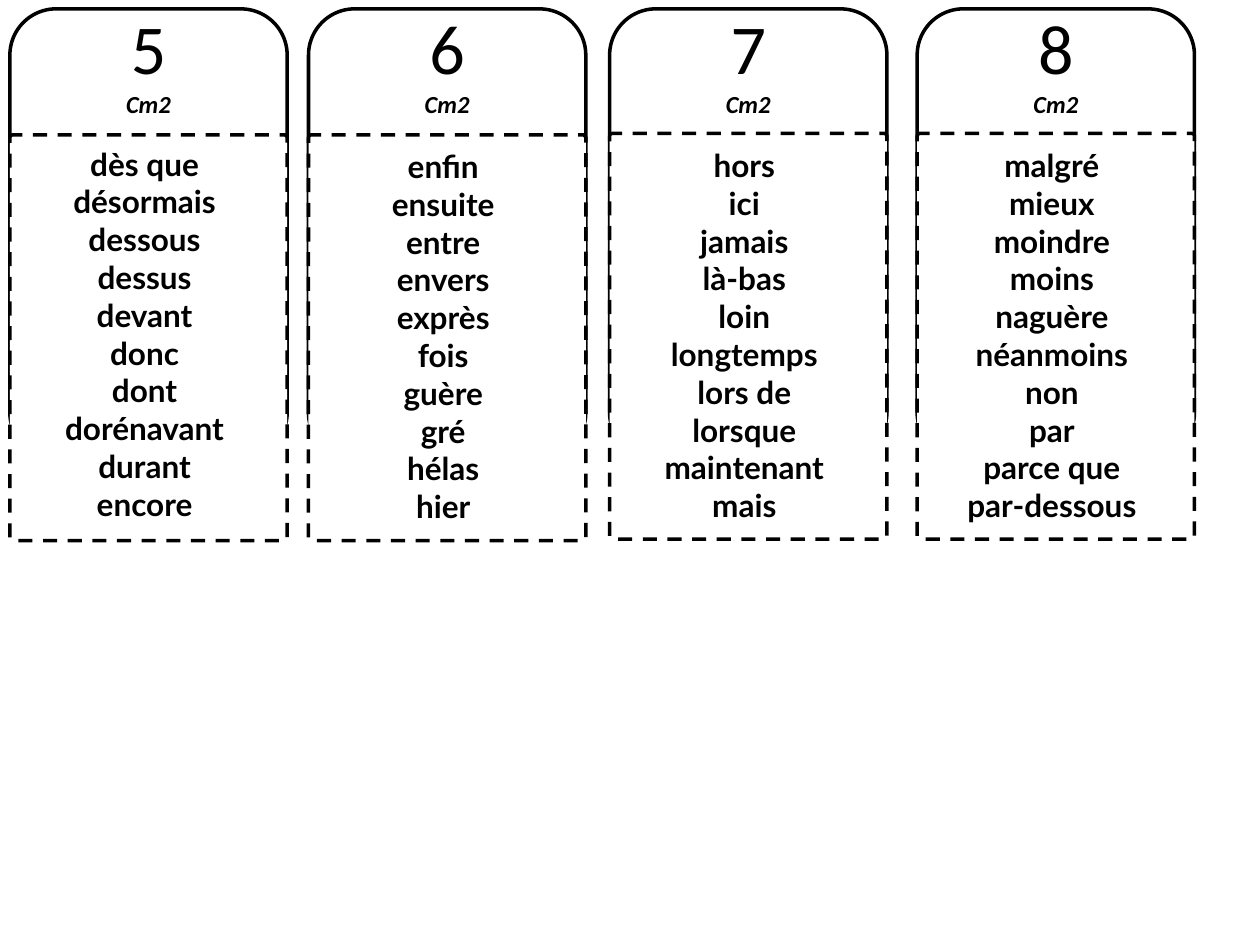
from dataclasses import dataclass
from typing import Any

from pptx import Presentation
from pptx.dml.color import RGBColor
from pptx.enum.dml import MSO_LINE
from pptx.enum.shapes import MSO_SHAPE
from pptx.enum.text import MSO_ANCHOR, MSO_AUTO_SIZE, PP_ALIGN
from pptx.util import Cm, Pt


@dataclass(frozen=True)
class Theme:
    """Colours, line width and text formats."""
    ink: RGBColor = RGBColor(0, 0, 0)
    paper: RGBColor = RGBColor(255, 255, 255)
    line: Pt = Pt(2)

    def number(self) -> dict[str, Any]:
        """Format of the card number."""
        return {"name": "Calibri", "size": Pt(40)}

    def level(self) -> dict[str, Any]:
        """Format of the level label."""
        return {"name": "Calibri", "size": Pt(14), "bold": True, "italic": True}

    def word(self) -> dict[str, Any]:
        """Format of a listed word."""
        return {"name": "Lato", "size": Pt(18), "bold": True}


@dataclass(frozen=True)
class Card:
    """A numbered word list, with lengths in centimetres."""
    number: str
    words: tuple[str, ...]
    left: float
    panel_top: float
    list_top: float
    list_width: float


THEME = Theme()
CARD_W, CARD_H, CARD_TOP = 5.59, 9.07, 0.18
PANEL_H, LIST_H = 8.18, 7.95
CARDS = (
    Card("5", ("dès que", "désormais", "dessous", "dessus", "devant", "donc",
               "dont", "dorénavant", "durant", "encore"), 0.2, 2.72, 2.79, 4.75),
    Card("6", ("enfin", "ensuite", "entre", "envers", "exprès", "fois",
               "guère", "gré", "hélas", "hier"), 6.22, 2.72, 2.84, 4.95),
    Card("7", ("hors", "ici", "jamais", "là-bas", "loin", "longtemps",
               "lors de", "lorsque", "maintenant", "mais"), 12.29, 2.69, 2.82, 5.13),
    Card("8", ("malgré", "mieux", "moindre", "moins", "naguère", "néanmoins",
               "non", "par", "parce que", "par-dessous"), 18.49, 2.69, 2.82, 5.13),
)


def apply(obj: Any, fmt: dict[str, Any]) -> None:
    """Set each attribute named in the format."""
    for name, value in fmt.items():
        setattr(obj, name, value)


def add_lines(tf: Any, lines: list[tuple[str, dict[str, Any]]]) -> None:
    """Write centred paragraphs, one for each line."""
    for i, (text, fmt) in enumerate(lines):
        p = tf.add_paragraph() if i else tf.paragraphs[0]
        p.alignment = PP_ALIGN.CENTER
        r = p.add_run()
        r.text = text
        apply(r.font, fmt)
        r.font.color.rgb = THEME.ink


def add_frame(s: Any, left: float, top: float, height: float) -> Any:
    """Add an outlined rounded rectangle of card width."""
    sp = s.shapes.add_shape(MSO_SHAPE.ROUNDED_RECTANGLE,
                            Cm(left), Cm(top), Cm(CARD_W), Cm(height))
    sp.shadow.inherit = False
    sp.fill.background()
    sp.line.color.rgb = THEME.ink
    sp.line.width = THEME.line
    return sp


def add_card(s: Any, card: Card) -> None:
    """Draw the numbered tab and the dashed panel."""
    tab = add_frame(s, card.left, CARD_TOP, CARD_H)
    apply(tab.text_frame, {"vertical_anchor": MSO_ANCHOR.MIDDLE,
                           "margin_top": 0, "margin_bottom": Cm(6.96)})
    add_lines(tab.text_frame, [(card.number, THEME.number()), ("Cm2", THEME.level())])

    panel = add_frame(s, card.left, card.panel_top, PANEL_H)
    panel.adjustments[0] = 0.01
    panel.fill.solid()
    panel.fill.fore_color.rgb = THEME.paper
    panel.line.dash_style = MSO_LINE.DASH


def add_words(s: Any, card: Card) -> None:
    """Draw the word list centred over its card."""
    left = card.left + (CARD_W - card.list_width) / 2
    tf = s.shapes.add_textbox(Cm(left), Cm(card.list_top),
                              Cm(card.list_width), Cm(LIST_H)).text_frame
    apply(tf, {"word_wrap": True, "auto_size": MSO_AUTO_SIZE.SHAPE_TO_FIT_TEXT,
               "margin_right": Cm(0.41)})
    add_lines(tf, [(word, THEME.word()) for word in card.words])


def main() -> None:
    """Build the slide and save it."""
    prs = Presentation()
    apply(prs, {"slide_width": Cm(25.4), "slide_height": Cm(19.05)})
    s = prs.slides.add_slide(prs.slide_layouts[6])
    for draw in (add_card, add_words):
        for card in CARDS:
            draw(s, card)
    prs.save("out.pptx")


if __name__ == "__main__":
    main()
